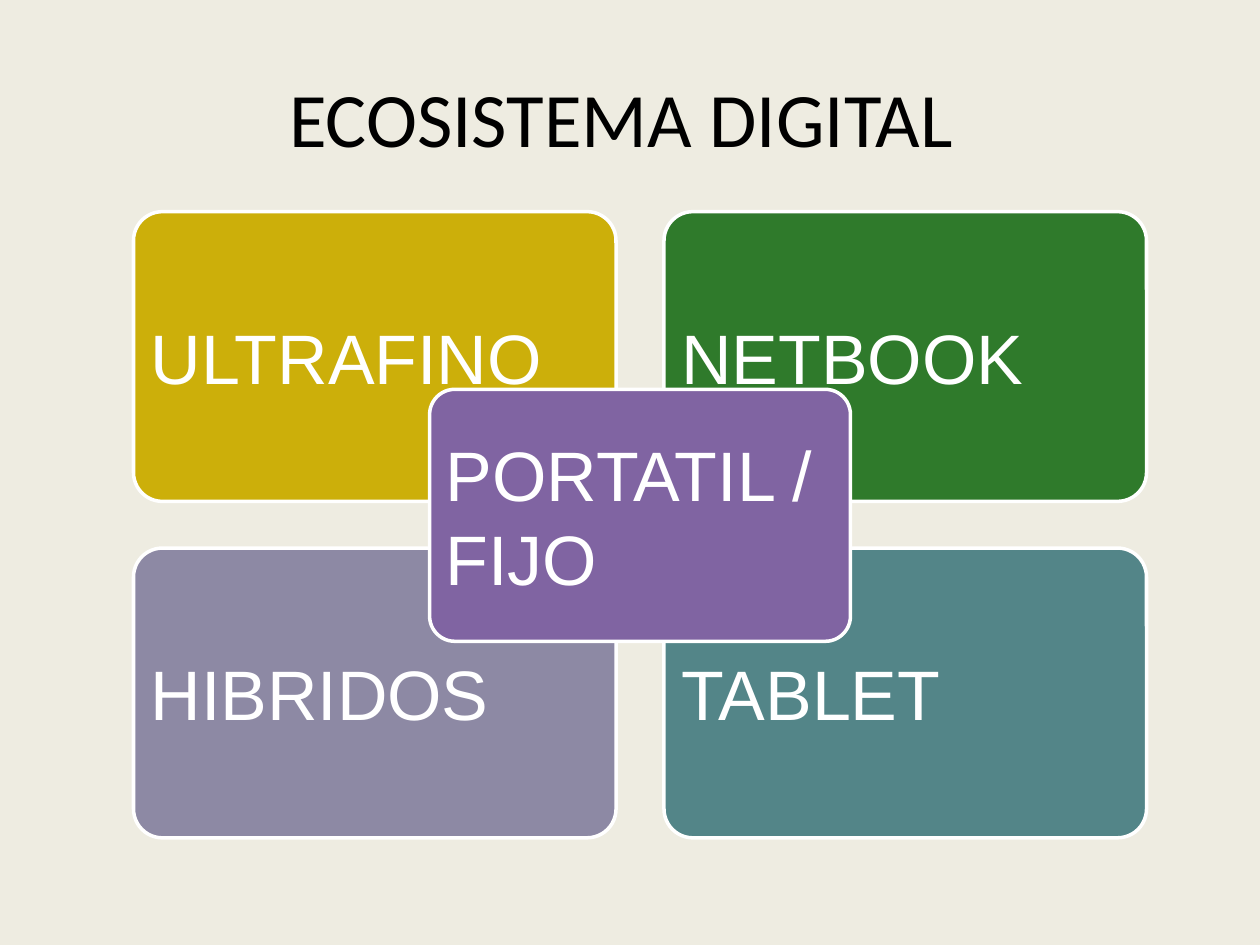
from dataclasses import dataclass

import pptx
import pptx.dml.color
import pptx.enum.shapes
import pptx.enum.text
import pptx.util
from pptx.util import Inches


def rgb(code: str) -> pptx.dml.color.RGBColor:
    return pptx.dml.color.RGBColor.from_string(code)


@dataclass(frozen=True)
class Theme:
    background: str = "EEECE1"
    title_color: str = "000000"
    card_text: str = "FFFFFF"
    card_border: str = "FFFFFF"
    title_font: str = "Calibri"
    card_font: str = "Arial"
    title_size: int = 44
    card_size: int = 40


@dataclass(frozen=True)
class Card:
    label: str
    fill: str
    left: float
    top: float
    width: float
    height: float


THEME = Theme()

LEFT, TOP = 1.06, 1.68
CARD_WIDTH, CARD_HEIGHT = 3.83, 2.3
COLUMN_GAP, ROW_GAP = 0.38, 0.37
DEVICE_GRID = [
    [("ULTRAFINO", "CCAF0A"), ("NETBOOK", "2F7A2B")],
    [("HIBRIDOS", "8D89A4"), ("TABLET", "538588")],
]
CENTER_CARD = Card("PORTATIL / FIJO", "8064A2", 3.41, 3.09, 3.34, 2)


def add_title(slide: pptx.slide.Slide, text: str) -> None:
    title = slide.shapes.add_textbox(Inches(0.5), Inches(0.3), Inches(9), Inches(1.25))
    frame = title.text_frame
    frame.word_wrap = True
    frame.vertical_anchor = pptx.enum.text.MSO_ANCHOR.MIDDLE
    heading = frame.paragraphs[0]
    heading.text = text
    heading.alignment = pptx.enum.text.PP_ALIGN.CENTER
    heading.font.name = THEME.title_font
    heading.font.size = pptx.util.Pt(THEME.title_size)
    heading.font.color.rgb = rgb(THEME.title_color)


def add_card(slide: pptx.slide.Slide, card: Card) -> None:
    box = slide.shapes.add_shape(
        pptx.enum.shapes.MSO_SHAPE.ROUNDED_RECTANGLE,
        Inches(card.left), Inches(card.top), Inches(card.width), Inches(card.height),
    )
    box.adjustments[0] = 0.1
    box.shadow.inherit = False
    box.fill.solid()
    box.fill.fore_color.rgb = rgb(card.fill)
    box.line.color.rgb = rgb(THEME.card_border)
    box.line.width = pptx.util.Pt(2)

    frame = box.text_frame
    frame.word_wrap = True
    frame.vertical_anchor = pptx.enum.text.MSO_ANCHOR.MIDDLE
    frame.margin_left = frame.margin_right = Inches(0.07)
    frame.margin_top = frame.margin_bottom = Inches(0.07)
    label = frame.paragraphs[0]
    label.text = card.label
    label.alignment = pptx.enum.text.PP_ALIGN.LEFT
    label.font.name = THEME.card_font
    label.font.size = pptx.util.Pt(THEME.card_size)
    label.font.color.rgb = rgb(THEME.card_text)


def main() -> None:
    presentation = pptx.Presentation()
    presentation.slide_width, presentation.slide_height = Inches(10), Inches(7.5)
    slide = presentation.slides.add_slide(presentation.slide_layouts[6])
    slide.background.fill.solid()
    slide.background.fill.fore_color.rgb = rgb(THEME.background)

    for row, devices in enumerate(DEVICE_GRID):
        for column, (label, fill) in enumerate(devices):
            left = LEFT + column * (CARD_WIDTH + COLUMN_GAP)
            top = TOP + row * (CARD_HEIGHT + ROW_GAP)
            add_card(slide, Card(label, fill, left, top, CARD_WIDTH, CARD_HEIGHT))
    add_title(slide, "ECOSISTEMA DIGITAL ")
    add_card(slide, CENTER_CARD)
    presentation.save("out.pptx")


if __name__ == "__main__":
    main()
